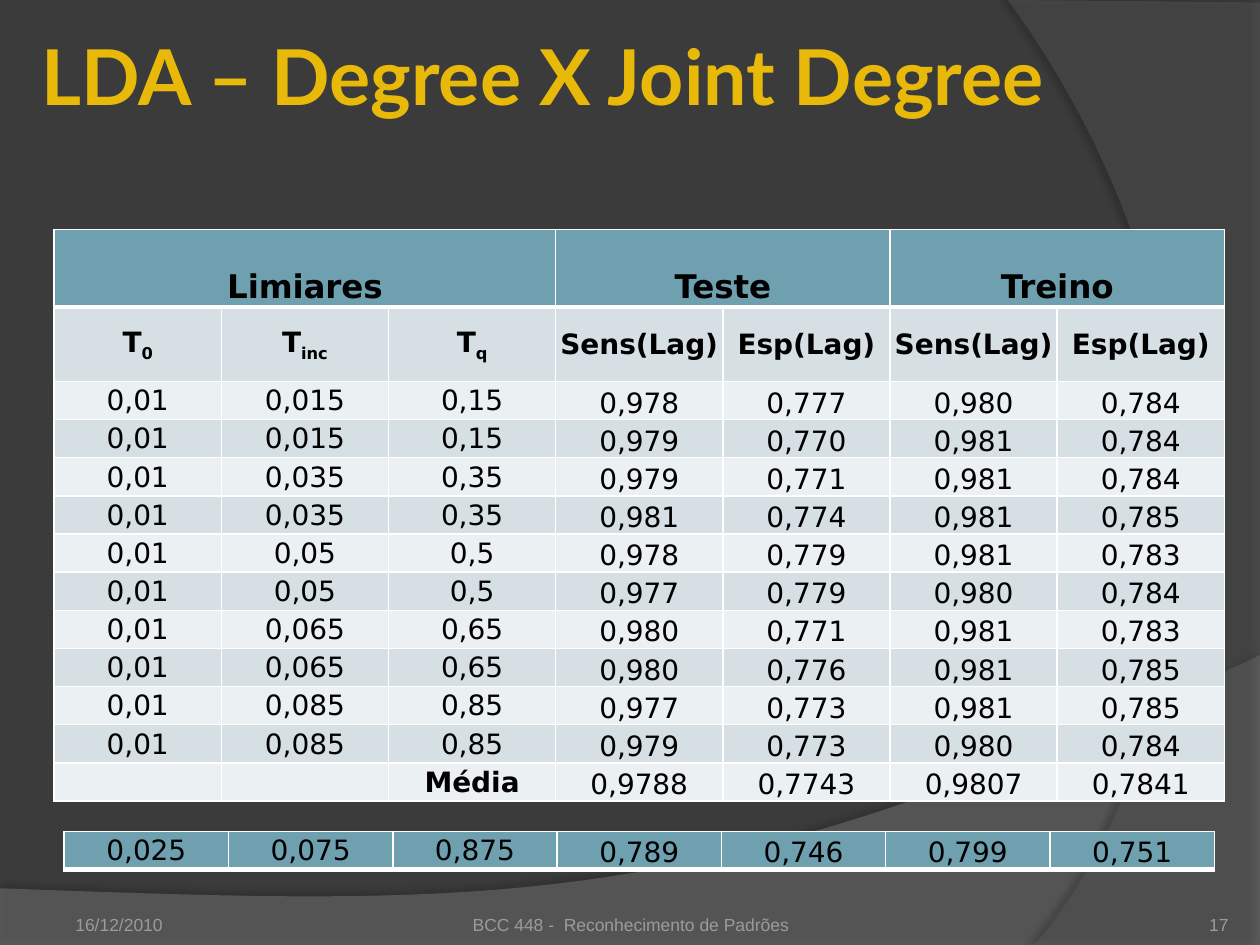
from lxml import etree
from pptx import Presentation
from pptx.dml.color import RGBColor
from pptx.enum.text import MSO_ANCHOR, PP_ALIGN
from pptx.oxml.ns import qn
from pptx.util import Inches, Pt

LEFT, CENTER, RIGHT = PP_ALIGN.LEFT, PP_ALIGN.CENTER, PP_ALIGN.RIGHT
MIDDLE, BOTTOM = MSO_ANCHOR.MIDDLE, MSO_ANCHOR.BOTTOM

COLORS = {
    "background": "3B3B3B", "wave": "7F7F7F", "arc": "5E5E5E",
    "shadow": "000000", "footer": "9D9B9A", "ink": "000000",
    "header": "6EA0B0", "band_dark": "D5DFE4", "band_light": "EBF0F2",
    "border": "FFFFFF",
    "title_top": "FFDC75", "title_mid": "E9B90A", "title_low": "9E8700",
}
TABLE_FONT = "DejaVu Sans"
COLUMNS = 7
THRESHOLD_COLUMNS = 3

GROUPS = [("Limiares", 0, 2), ("Teste", 3, 4), ("Treino", 5, 6)]
THRESHOLDS = ["0", "inc", "q"]
MEASURES = ["Sens(Lag)", "Esp(Lag)"] * 2
RESULTS = """
0,01 0,015 0,15 0,978 0,777 0,980 0,784
0,01 0,015 0,15 0,979 0,770 0,981 0,784
0,01 0,035 0,35 0,979 0,771 0,981 0,784
0,01 0,035 0,35 0,981 0,774 0,981 0,785
0,01 0,05 0,5 0,978 0,779 0,981 0,783
0,01 0,05 0,5 0,977 0,779 0,980 0,784
0,01 0,065 0,65 0,980 0,771 0,981 0,783
0,01 0,065 0,65 0,980 0,776 0,981 0,785
0,01 0,085 0,85 0,977 0,773 0,981 0,785
0,01 0,085 0,85 0,979 0,773 0,980 0,784
"""
MEANS = ["", "", "Média", "0,9788", "0,7743", "0,9807", "0,7841"]
BASELINE = ["0,025", "0,075", "0,875", "0,789", "0,746", "0,799", "0,751"]


def rgb(name):
    return RGBColor.from_string(COLORS[name])


def add_color(parent, name, alpha=None):
    color = etree.SubElement(parent, qn("a:srgbClr"), val=COLORS[name])
    if alpha is not None:
        etree.SubElement(color, qn("a:alpha"), val=str(alpha * 1000))


def add_run(paragraph, text, font, size, color=None, bold=False, baseline=0):
    run = paragraph.add_run()
    run.text = text
    run.font.name = font
    run.font.size = Pt(size)
    run.font.bold = bold
    if color:
        run.font.color.rgb = rgb(color)
    if baseline:
        run.font._element.set("baseline", str(baseline * 1000))
    return run


def bezier(start, control1, control2, end, steps=40):
    points = []
    for step in range(1, steps + 1):
        t = step / steps
        weights = ((1 - t) ** 3, 3 * t * (1 - t) ** 2, 3 * t * t * (1 - t), t ** 3)
        points.append(tuple(
            sum(w * p[axis] for w, p in zip(weights, (start, control1, control2, end)))
            for axis in (0, 1)))
    return points


def add_swoosh(slide, points, color, alpha, shadow_alpha, distance, direction):
    corners = [(Inches(x), Inches(y)) for x, y in points]
    builder = slide.shapes.build_freeform(*corners[0])
    builder.add_line_segments(corners[1:], close=True)
    swoosh = builder.convert_to_shape()
    swoosh.fill.solid()
    swoosh.fill.fore_color.rgb = rgb(color)
    fill_color = swoosh._element.spPr.find(qn("a:solidFill"))[0]
    etree.SubElement(fill_color, qn("a:alpha"), val=str(alpha * 1000))
    swoosh.line.fill.background()
    swoosh.shadow.inherit = False
    shadow = etree.SubElement(
        swoosh._element.spPr.find(qn("a:effectLst")), qn("a:outerShdw"),
        blurRad=str(Pt(4)), dist=str(Pt(distance)), dir=str(direction * 60000),
        algn="ctr", rotWithShape="0")
    add_color(shadow, "shadow", shadow_alpha)


def add_backdrop(slide):
    slide.background.fill.solid()
    slide.background.fill.fore_color.rgb = rgb("background")
    wave = [(0, 7.05), (0, 7.51), (10, 7.51), (10, 5.2)]
    wave += bezier((10, 5.2), (5.59, 7.29), (3.91, 7.19), (0, 7.05))
    add_swoosh(slide, wave[:-1], "wave", 45, 35, 3.5, 270)
    arc = [(10, 0.02), (10, 7.5), (8.21, 7.5)]
    arc += bezier((8.21, 7.5), (9.35, 6.19), (10.18, 3), (8, 0))
    add_swoosh(slide, arc, "arc", 40, 45, 4, 180)


def set_frame(frame, anchor, left, top, right, bottom):
    frame.word_wrap = True
    frame.vertical_anchor = anchor
    frame.margin_left, frame.margin_top = Inches(left), Inches(top)
    frame.margin_right, frame.margin_bottom = Inches(right), Inches(bottom)


def add_title(slide, left, top, width, height):
    title = slide.shapes.title
    title.left, title.top = Inches(left), Inches(top)
    title.width, title.height = Inches(width), Inches(height)
    set_frame(title.text_frame, MIDDLE, 0.05, 0.05, 0.05, 0.05)
    paragraph = title.text_frame.paragraphs[0]
    paragraph.alignment = LEFT
    run = add_run(paragraph, "LDA – Degree X Joint Degree", "Lato", 44, bold=True)
    gradient = etree.Element(qn("a:gradFill"))
    stops = etree.SubElement(gradient, qn("a:gsLst"))
    for position, color in ((0, "title_top"), (75, "title_mid"), (100, "title_low")):
        add_color(etree.SubElement(stops, qn("a:gs"), pos=str(position * 1000)), color)
    etree.SubElement(gradient, qn("a:lin"), ang=str(90 * 60000))
    run.font._element.insert(0, gradient)


def add_footer(slide, top, height):
    for text, left, width, alignment, side, over in (
            ("16/12/2010", 0.5, 2.33, LEFT, 0.1, 0.05),
            ("BCC 448 -  Reconhecimento de Padrões", 3.42, 3.17, CENTER, 0, 0.05),
            ("17", 8.92, 0.83, RIGHT, 0, 0)):
        note = slide.shapes.add_textbox(
            Inches(left), Inches(top), Inches(width), Inches(height))
        set_frame(note.text_frame, BOTTOM, side, over, side, 0)
        paragraph = note.text_frame.paragraphs[0]
        paragraph.alignment = alignment
        add_run(paragraph, text, "Arial", 10, "footer")


def style_cell(cell, fill, anchor=MIDDLE, top=1, bottom=1):
    cell.fill.solid()
    cell.fill.fore_color.rgb = rgb(fill)
    cell.vertical_anchor = anchor
    cell.margin_left = cell.margin_right = cell.margin_top = Inches(0.01)
    cell.margin_bottom = 0
    sides = (("L", 1), ("R", 1), ("T", top), ("B", bottom))
    for order, (side, weight) in enumerate(sides):
        border = etree.Element(qn(f"a:ln{side}"), w=str(Pt(weight)))
        add_color(etree.SubElement(border, qn("a:solidFill")), "border")
        cell._tc.tcPr.insert(order, border)


def write_cell(cell, *runs, size=16, bold=False):
    paragraph = cell.text_frame.paragraphs[0]
    paragraph.alignment = CENTER
    for text, baseline in runs:
        if text:
            add_run(paragraph, text, TABLE_FONT, size, "ink", bold, baseline)
        else:
            etree.SubElement(paragraph._p, qn("a:endParaRPr"), sz=str(size * 100))


def add_grid(slide, left, top, width, row_heights):
    grid = slide.shapes.add_table(
        len(row_heights), COLUMNS, Inches(left), Inches(top),
        Inches(width), Inches(sum(row_heights))).table
    grid.first_row = grid.horz_banding = False
    for column in grid.columns:
        column.width = Inches(width / COLUMNS)
    for row, height in zip(grid.rows, row_heights):
        row.height = Inches(height)
    return grid


def fill_values(grid, row, values, fill, bottom=1):
    for column, value in enumerate(values):
        anchor = BOTTOM if value and column >= THRESHOLD_COLUMNS else MIDDLE
        cell = grid.cell(row, column)
        style_cell(cell, fill, anchor, bottom=bottom)
        write_cell(cell, (value, 0), bold=value == "Média")


def add_results(slide, left, top, width):
    rows = [line.split() for line in RESULTS.strip().splitlines()] + [MEANS]
    grid = add_grid(slide, left, top, width, [0.59] * 2 + [0.303] * len(rows))
    for column in range(COLUMNS):
        style_cell(grid.cell(0, column), "header", bottom=3)
        style_cell(grid.cell(1, column), "band_dark", top=3)
    for label, first, last in GROUPS:
        grid.cell(0, first).merge(grid.cell(0, last))
        write_cell(grid.cell(0, first), (label, -25), size=32, bold=True)
    headings = [[("T", 0), (mark, -25)] for mark in THRESHOLDS]
    headings += [[(measure, 0)] for measure in MEASURES]
    for column, runs in enumerate(headings):
        write_cell(grid.cell(1, column), *runs, bold=True)
    for index, values in enumerate(rows):
        fill_values(grid, index + 2, values, "band_dark" if index % 2 else "band_light")


def add_baseline(slide, left, top, width):
    grid = add_grid(slide, left, top, width, [0.3])
    fill_values(grid, 0, BASELINE, "header", bottom=3)


def main():
    deck = Presentation()
    deck.slide_width, deck.slide_height = Inches(10), Inches(7.5)
    slide = deck.slides.add_slide(deck.slide_layouts[5])
    add_backdrop(slide)
    add_title(slide, 0.28, -0.03, 9.45, 1.25)
    add_footer(slide, 7.02, 0.4)
    add_results(slide, 0.43, 1.82, 9.29)
    add_baseline(slide, 0.51, 6.6, 9.13)
    deck.save("out.pptx")


if __name__ == "__main__":
    main()
